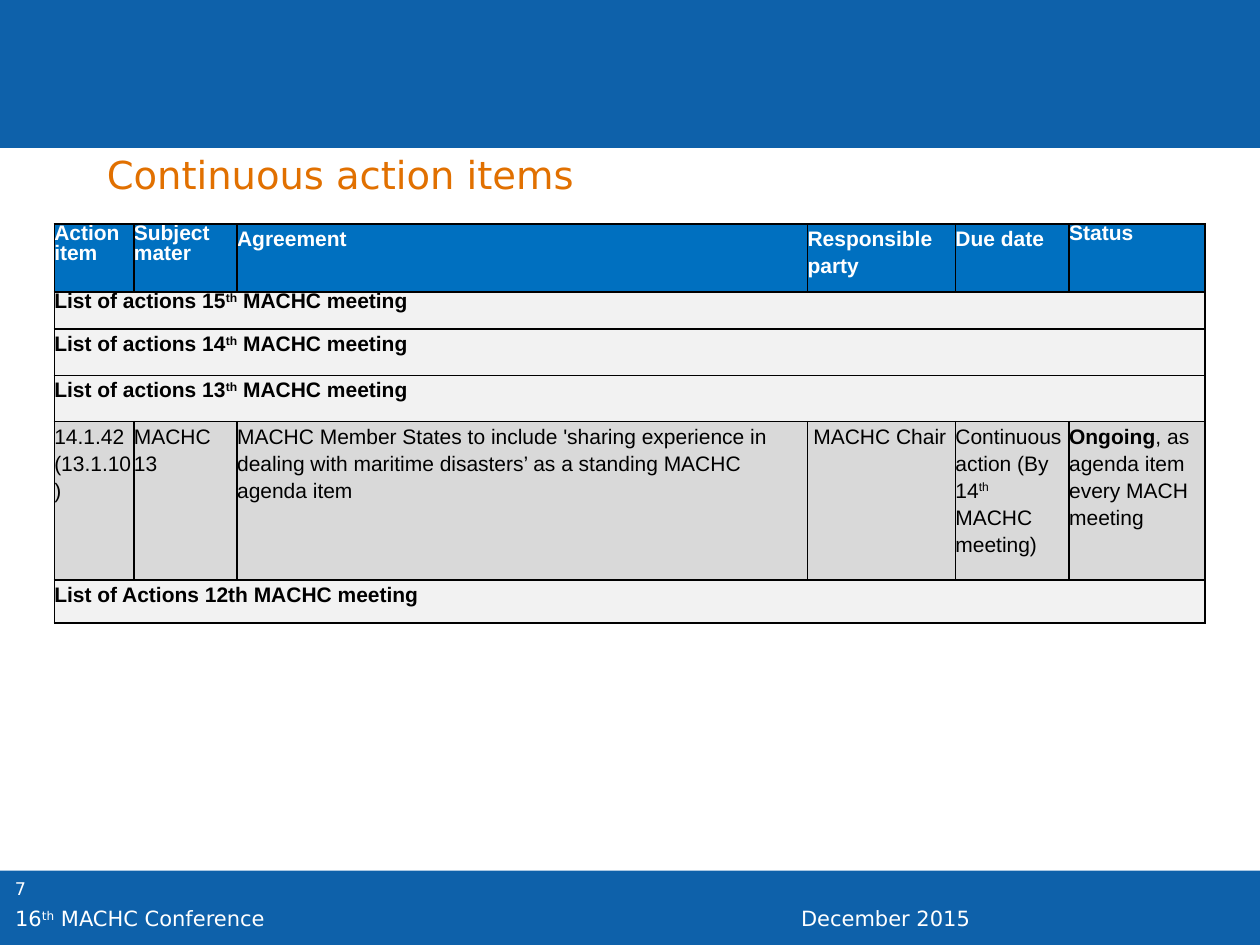
from lxml.etree import SubElement
from pptx import Presentation
from pptx.dml.color import RGBColor
from pptx.enum.shapes import MSO_SHAPE as Shape
from pptx.enum.text import MSO_AUTO_SIZE as AutoSize
from pptx.oxml.ns import qn
from pptx.util import Pt

BAND_BLUE = RGBColor(0x0E, 0x61, 0xAA)
HEADER_BLUE = RGBColor(0x00, 0x70, 0xC0)
ORANGE = RGBColor(0xE1, 0x70, 0x00)
WHITE = RGBColor(0xFF, 0xFF, 0xFF)
BLACK = RGBColor(0x00, 0x00, 0x00)
LIGHT_GREY = RGBColor(0xF2, 0xF2, 0xF2)
MID_GREY = RGBColor(0xD9, 0xD9, 0xD9)

PAGE_WIDTH, PAGE_HEIGHT = 720, 540
TIGHT, LOOSE = Pt(11.8), 1.15
COLUMN_WIDTHS = [45.5, 59, 326, 84.5, 65, 77.5]

HEADINGS = [
    ("Action item", TIGHT),
    ("Subject mater", TIGHT),
    ("Agreement", LOOSE),
    ("Responsible party", LOOSE),
    ("Due date", LOOSE),
    ("Status", TIGHT),
]
ACTION = [
    "14.1.42\n(13.1.10)",
    "MACHC 13",
    "MACHC Member States to include 'sharing experience in dealing with "
    "maritime disasters’ as a standing MACHC agenda item",
    " MACHC Chair",
    "Continuous action (By 14^th^ MACHC meeting)",
    "*Ongoing*, as agenda item every MACH meeting",
]
SECTIONS = {
    1: ("List of actions 15^th^ MACHC meeting", TIGHT, 21),
    2: ("List of actions 14^th^ MACHC meeting", LOOSE, 26.5),
    3: ("List of actions 13^th^ MACHC meeting", LOOSE, 26.5),
    5: ("List of Actions 12th MACHC meeting", LOOSE, 24.5),
}
HEADER_HEIGHT, ACTION_HEIGHT = 39, 90.5


def add_spans(para, text, font, size, color, bold=False):
    for i, chunk in enumerate(text.split("*")):
        for j, piece in enumerate(chunk.split("^")):
            if not piece:
                continue
            span = para.add_run()
            span.text = piece
            span.font.name = font
            span.font.size = Pt(size)
            span.font.color.rgb = color
            span.font.bold = bold or i % 2 == 1
            if j % 2:
                span.font._element.set("baseline", "30000")


def add_label(page, box, text, size, color, wrap=True):
    label = page.shapes.add_textbox(*map(Pt, box))
    frame = label.text_frame
    frame.word_wrap = wrap
    if not wrap:
        frame.auto_size = AutoSize.SHAPE_TO_FIT_TEXT
    add_spans(frame.paragraphs[0], text, "DejaVu Sans", size, color)


def add_band(page, box):
    band = page.shapes.add_shape(Shape.RECTANGLE, *map(Pt, box))
    band.shadow.inherit = False
    band.fill.solid()
    band.fill.fore_color.rgb = BAND_BLUE
    band.line.fill.background()


def add_footer(page, box):
    left, top, width, height = box
    add_band(page, box)
    add_label(page, (left + 1.5, top + 0.5, 56, 29), "7", 10, WHITE)
    line_top = top + 16.5
    add_label(page, (left + 1.5, line_top, 315, 17), "16^th^ MACHC Conference", 12, WHITE)
    add_label(page, (left + 450.7, line_top, width - 450.7, 17), "December 2015", 12, WHITE)


def add_borders(cell):
    properties = cell._tc.get_or_add_tcPr()
    for position, side in enumerate(("lnL", "lnR", "lnT", "lnB")):
        border = SubElement(properties, qn("a:" + side), w=str(Pt(1)))
        fill = SubElement(border, qn("a:solidFill"))
        SubElement(fill, qn("a:srgbClr"), val=str(BLACK))
        properties.remove(border)
        properties.insert(position, border)


def fill_cell(cell, text, spacing, fill, color=BLACK, bold=False):
    cell.margin_left = cell.margin_right = cell.margin_top = cell.margin_bottom = 0
    cell.fill.solid()
    cell.fill.fore_color.rgb = fill
    frame = cell.text_frame
    for i, line in enumerate(text.split("\n")):
        para = frame.add_paragraph() if i else frame.paragraphs[0]
        para.line_spacing = spacing
        add_spans(para, line, "Arial", 12, color, bold)


def add_actions_table(page, box):
    table = page.shapes.add_table(6, len(COLUMN_WIDTHS), *map(Pt, box)).table
    for column, width in zip(table.columns, COLUMN_WIDTHS):
        column.width = Pt(width)
    table.rows[0].height = Pt(HEADER_HEIGHT)
    table.rows[4].height = Pt(ACTION_HEIGHT)
    for cell in table.iter_cells():
        add_borders(cell)
    for i, (heading, spacing) in enumerate(HEADINGS):
        fill_cell(table.cell(0, i), heading, spacing, HEADER_BLUE, WHITE, True)
    for row, (text, spacing, height) in SECTIONS.items():
        table.rows[row].height = Pt(height)
        table.cell(row, 0).merge(table.cell(row, len(COLUMN_WIDTHS) - 1))
        fill_cell(table.cell(row, 0), text, spacing, LIGHT_GREY, bold=True)
    for i, text in enumerate(ACTION):
        fill_cell(table.cell(4, i), text, LOOSE, MID_GREY)


def main():
    deck = Presentation()
    deck.slide_width, deck.slide_height = Pt(PAGE_WIDTH), Pt(PAGE_HEIGHT)
    page = deck.slides.add_slide(deck.slide_layouts[6])
    add_footer(page, (0, 497.5, PAGE_WIDTH, 42.5))
    add_band(page, (0, 0, PAGE_WIDTH, 84.5))
    add_label(page, (54, 83, 282, 34), "Continuous action items", 22, ORANGE, wrap=False)
    add_actions_table(page, (31, 128, sum(COLUMN_WIDTHS), 228))
    deck.save("out.pptx")


if __name__ == "__main__":
    main()
